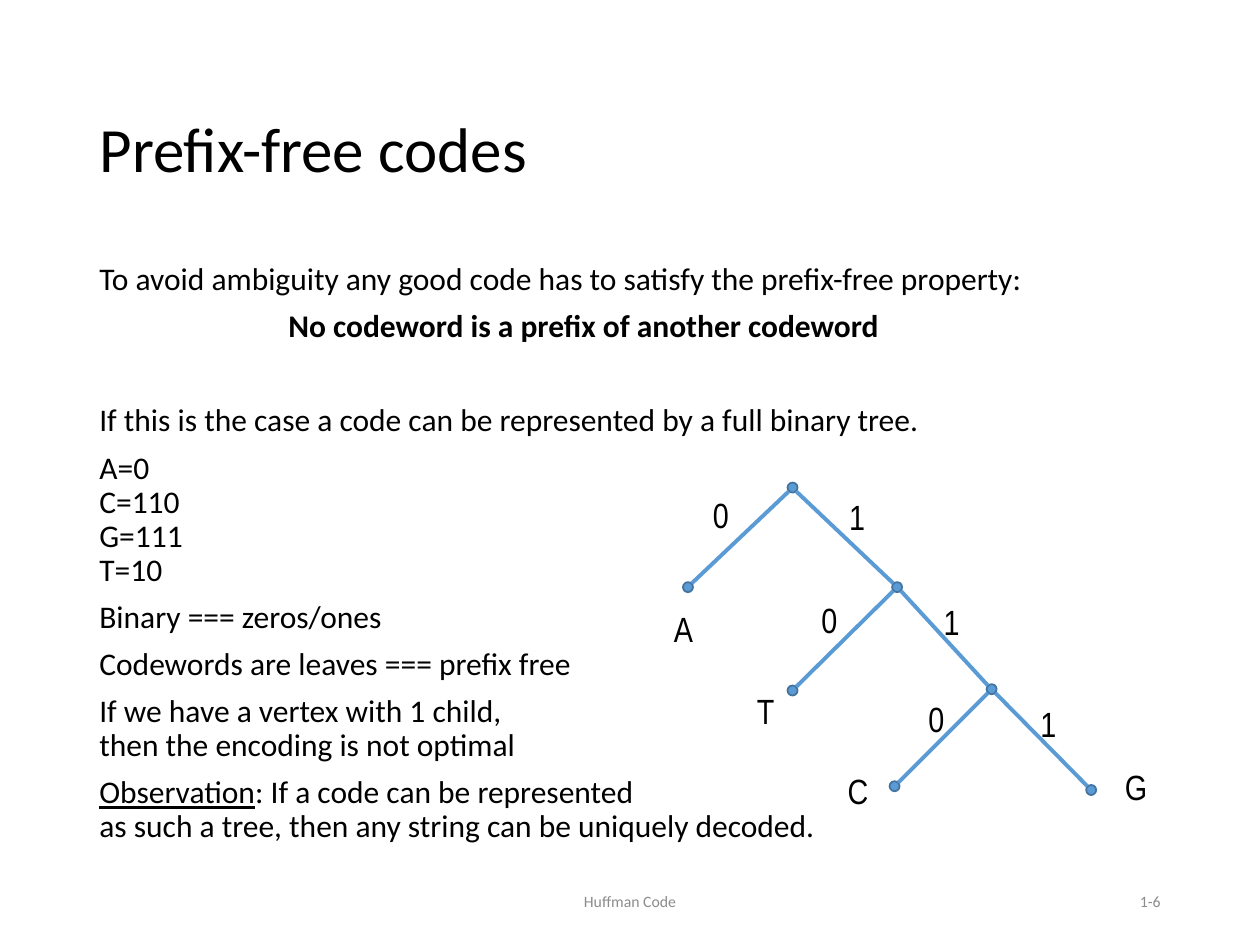
from dataclasses import dataclass

from lxml.etree import SubElement
from pptx import Presentation
from pptx.dml.color import RGBColor as Color
from pptx.enum.shapes import MSO_CONNECTOR as Connector, MSO_SHAPE as Preset
from pptx.enum.text import MSO_ANCHOR as Anchor, MSO_AUTO_SIZE as AutoSize, PP_ALIGN as Align
from pptx.oxml.ns import qn
from pptx.util import Inches, Pt


@dataclass(frozen=True)
class Theme:
    text: Color = Color.from_string("000000")
    muted: Color = Color.from_string("8C8C8C")
    accent: Color = Color.from_string("5B9BD5")
    outline: Color = Color.from_string("43739E")
    font: str = "Calibri"
    label_font: str = "Arial Narrow"
    title_size: int = 36
    label_size: int = 20
    body_size: int = 18
    footer_size: int = 9


def write(paragraph, text, *, font, size, color, bold=False, underline=False):
    for index, line in enumerate(text.split("\n")):
        if index:
            paragraph.add_line_break()
        run = paragraph.add_run()
        run.text = line
        run.font.name = font
        run.font.size = Pt(size)
        run.font.color.rgb = color
        run.font.bold = bold
        run.font.underline = underline


def space(paragraph, line, before):
    paragraph.line_spacing = line
    paragraph.space_before = Pt(before)


class SlideBuilder:
    def __init__(self, slide, theme):
        self.slide = slide
        self.theme = theme

    def title(self, text, left, top, width, height):
        title = self.slide.shapes.title
        title.left, title.top = Inches(left), Inches(top)
        title.width, title.height = Inches(width), Inches(height)
        frame = title.text_frame
        frame.auto_size = AutoSize.NONE
        frame.vertical_anchor = Anchor.MIDDLE
        paragraph = frame.paragraphs[0]
        paragraph.alignment = Align.LEFT
        space(paragraph, 1.15, 6)
        write(paragraph, text, font=self.theme.font, size=self.theme.title_size,
              color=self.theme.text)

    def text_frame(self, left, top, width, height, wrap=True):
        box = self.slide.shapes.add_textbox(
            Inches(left), Inches(top), Inches(width), Inches(height))
        box.text_frame.word_wrap = wrap
        return box.text_frame

    def footer(self, text, left, width, alignment):
        frame = self.text_frame(left, 6.95, width, 0.4)
        frame.vertical_anchor = Anchor.MIDDLE
        paragraph = frame.paragraphs[0]
        paragraph.alignment = alignment
        write(paragraph, text, font=self.theme.font, size=self.theme.footer_size,
              color=self.theme.muted)

    def body(self, paragraphs, left, top, width, height):
        frame = self.text_frame(left, top, width, height)
        for index, (runs, before, indent) in enumerate(paragraphs):
            paragraph = frame.add_paragraph() if index else frame.paragraphs[0]
            space(paragraph, 0.9, before)
            if indent:
                paragraph._p.get_or_add_pPr().set("marL", str(Inches(indent)))
            for text, style in runs:
                write(paragraph, text, font=self.theme.font, size=self.theme.body_size,
                      color=self.theme.text, **style)

    def label(self, text, left, top, width):
        frame = self.text_frame(left, top, width, 0.44, wrap=False)
        frame.auto_size = AutoSize.SHAPE_TO_FIT_TEXT
        write(frame.paragraphs[0], text, font=self.theme.label_font,
              size=self.theme.label_size, color=self.theme.text)

    def node(self, x, y, diameter=0.08):
        shape = self.slide.shapes.add_shape(
            Preset.OVAL, Inches(x - diameter / 2), Inches(y - diameter / 2),
            Inches(diameter), Inches(diameter))
        shape.shadow.inherit = False
        shape.fill.solid()
        shape.fill.fore_color.rgb = self.theme.accent
        shape.line.color.rgb = self.theme.outline
        shape.line.width = Pt(1)

    def edge(self, parent, child, offset=0.03):
        side = offset if child[0] > parent[0] else -offset
        line = self.slide.shapes.add_connector(
            Connector.STRAIGHT,
            Inches(parent[0] + side), Inches(parent[1] + offset),
            Inches(child[0] - side), Inches(child[1] - offset))
        line.line.color.rgb = self.theme.accent
        line.line.width = Pt(2.25)
        SubElement(line._element.spPr, qn("a:effectLst"))


GAP = 7.5
SECTION_GAP = 34.4
BODY = [
    ([("To avoid ambiguity any good code has to satisfy the prefix-free property:", {})], GAP, 0),
    ([("No codeword is a prefix of another codeword", {"bold": True})], GAP, 1.5),
    ([("If this is the case a code can be represented by a full binary tree.", {})],
     SECTION_GAP, 0),
    ([("A=0\nC=110\nG=111\nT=10", {})], GAP, 0),
    ([("Binary === zeros/ones", {})], GAP, 0),
    ([("Codewords are leaves === prefix free", {})], GAP, 0),
    ([("If we have a vertex with 1 child,\nthen the encoding is not optimal", {})], GAP, 0),
    ([("Observation", {"underline": True}),
      (": If a code can be represented\n"
       "as such a tree, then any string can be uniquely decoded.", {})], GAP, 0),
]
NODES = {
    "root": (6.29, 3.87), "A": (5.46, 4.66), "1": (7.12, 4.66), "T": (6.29, 5.48),
    "11": (7.87, 5.47), "C": (7.1, 6.24), "G": (8.66, 6.27),
}
EDGES = [("root", "A"), ("root", "1"), ("1", "T"), ("1", "11"), ("11", "C"), ("11", "G")]
LEAF_LABELS = [("A", 5.25, 4.77, 0.39), ("C", 6.63, 6.06, 0.37),
               ("G", 8.83, 6.03, 0.38), ("T", 5.91, 5.42, 0.34)]
BIT_LABELS = [("0", 5.56, 3.87), ("1", 6.64, 3.88), ("0", 6.42, 4.7),
              ("1", 7.39, 4.72), ("0", 7.27, 5.49), ("1", 8.16, 5.53)]


def main():
    presentation = Presentation()
    presentation.slide_width, presentation.slide_height = Inches(10), Inches(7.5)
    slide = presentation.slides.add_slide(presentation.slide_layouts[5])
    builder = SlideBuilder(slide, Theme())
    builder.title("Prefix-free codes", 0.69, 0.4, 8.62, 1.45)
    builder.footer("Huffman Code", 3.31, 3.38, Align.CENTER)
    builder.footer("1-6", 7.06, 2.25, Align.RIGHT)
    builder.body(BODY, 0.69, 2.04, 8.62, 4.76)
    for x, y in NODES.values():
        builder.node(x, y)
    for parent, child in EDGES:
        builder.edge(NODES[parent], NODES[child])
    for text, left, top, width in LEAF_LABELS:
        builder.label(text, left, top, width)
    for text, left, top in BIT_LABELS:
        builder.label(text, left, top, 0.36)
    presentation.save("out.pptx")


if __name__ == "__main__":
    main()
